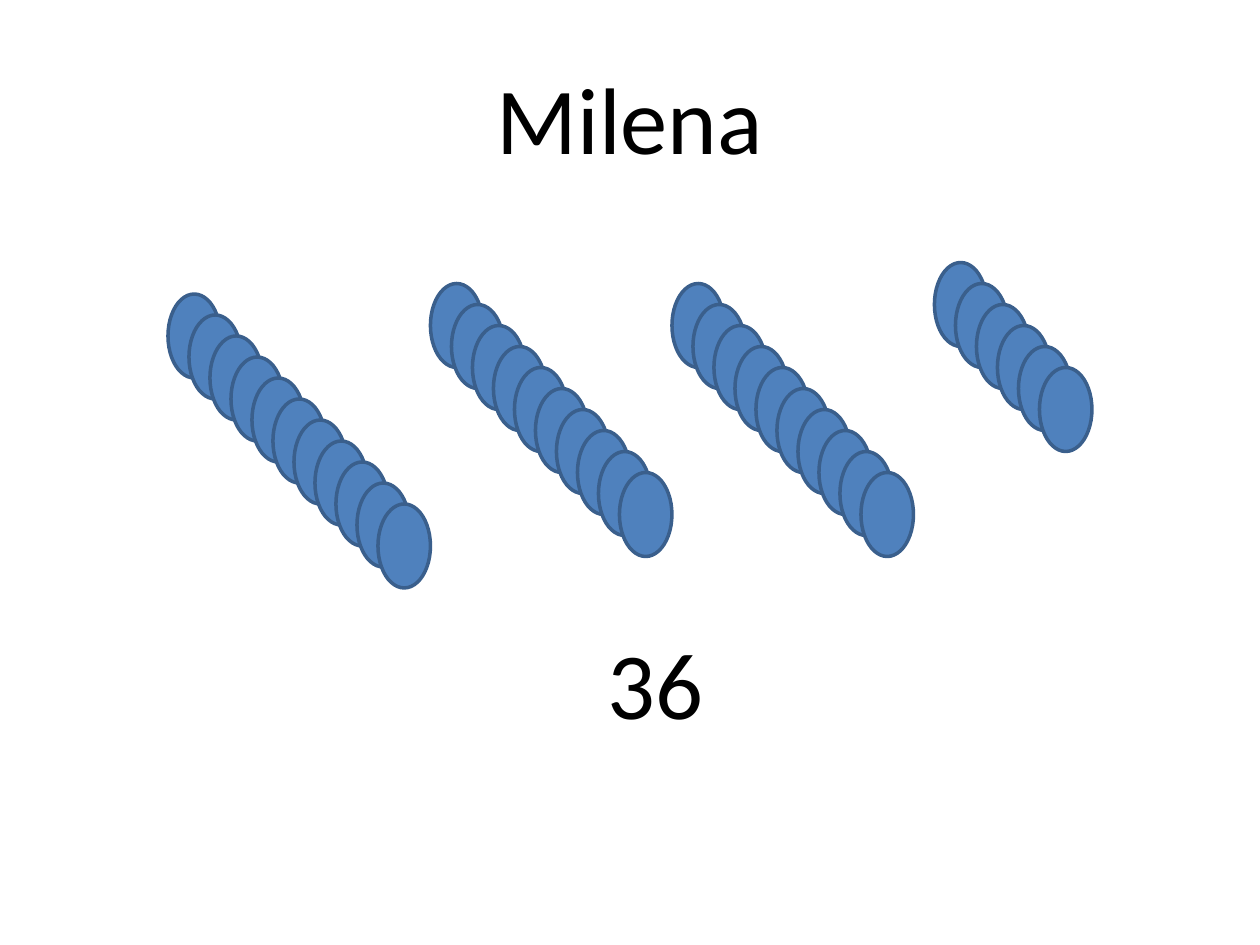
"""Build a counting slide: a name, four diagonal rows of ovals and a number."""
from pptx import Presentation
from pptx import util as u
from pptx.dml.color import RGBColor
from pptx.enum import shapes, text

COLORS = {"text": "000000", "oval": "4F81BD", "outline": "3A5F8C"}

deck = Presentation()
deck.slide_width, deck.slide_height = u.Inches(10), u.Inches(7.5)
page = deck.slides.add_slide(deck.slide_layouts[6])
cell = deck.slide_width / 120


def grid(*counts):
    return [u.Emu(round(count * cell)) for count in counts]


labels = [
    ("Milena", (6, 3.6, 108, 15), text.MSO_ANCHOR.MIDDLE, (1.2, 0.6)),
    ("36", (6, 21, 108, 59.4), text.MSO_ANCHOR.TOP, (6, 38.5)),
]
for words, place, anchor, insets in labels:
    box = page.shapes.add_textbox(*grid(*place))
    frame = box.text_frame
    frame.word_wrap = True
    frame.vertical_anchor = anchor
    frame.margin_left, frame.margin_top = grid(*insets)
    para = frame.paragraphs[0]
    para.alignment = text.PP_ALIGN.CENTER
    span = para.add_run()
    span.text = words
    span.font.name = "Calibri"
    span.font.size = u.Pt(54)
    span.font.color.rgb = RGBColor.from_string(COLORS["text"])

diagonals = [(16, 28, 11), (41, 27, 10), (64, 27, 10), (89, 25, 6)]
for column, row, count in diagonals:
    for step in range(0, 2 * count, 2):
        oval = page.shapes.add_shape(
            shapes.MSO_SHAPE.OVAL, *grid(column + step, row + step, 5, 8))
        oval.shadow.inherit = False
        oval.fill.solid()
        oval.fill.fore_color.rgb = RGBColor.from_string(COLORS["oval"])
        oval.line.color.rgb = RGBColor.from_string(COLORS["outline"])
        oval.line.width = u.Pt(2)

deck.save("out.pptx")
